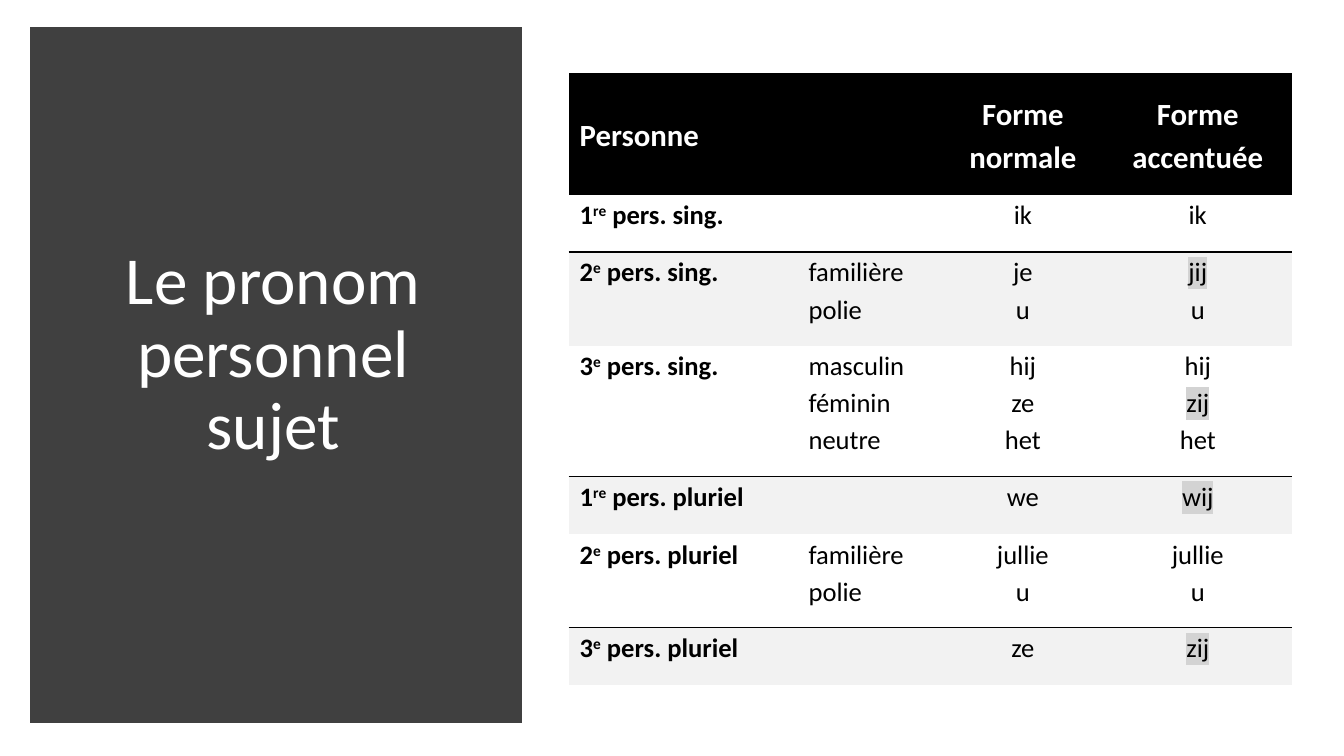
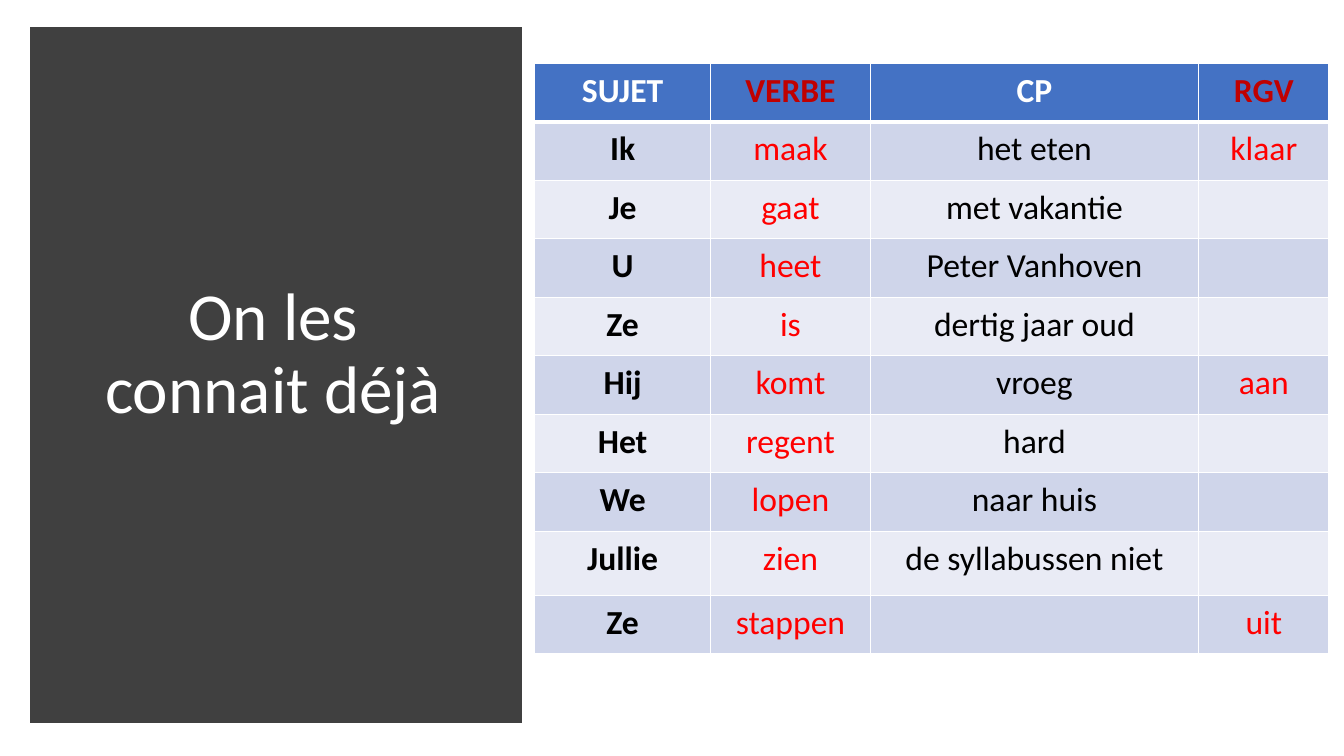
"""Builds two slides on Dutch subject pronouns, each with a title panel and a table."""
from lxml import etree
from pptx import Presentation
from pptx.dml.color import RGBColor
from pptx.enum.shapes import MSO_SHAPE
from pptx.enum.text import MSO_ANCHOR, MSO_AUTO_SIZE, PP_ALIGN
from pptx.oxml.ns import qn
from pptx.util import Inches, Pt

RECTANGLE = MSO_SHAPE.RECTANGLE
TOP, MIDDLE = MSO_ANCHOR.TOP, MSO_ANCHOR.MIDDLE
LEFT, CENTER = PP_ALIGN.LEFT, PP_ALIGN.CENTER
NO_AUTOFIT = MSO_AUTO_SIZE.NONE

FONT = "Calibri"
TITLE_ONLY = 5
BLACK = RGBColor(0x00, 0x00, 0x00)
WHITE = RGBColor(0xFF, 0xFF, 0xFF)
CHARCOAL = RGBColor(0x40, 0x40, 0x40)
PALE_GREY = RGBColor(0xF2, 0xF2, 0xF2)
MARKER_GREY = RGBColor(0xD3, 0xD3, 0xD3)
BLUE = RGBColor(0x44, 0x72, 0xC4)
BLUE_BAND = RGBColor(0xCF, 0xD5, 0xEA)
PALE_BAND = RGBColor(0xE9, 0xEB, 0xF5)
RED = RGBColor(0xFF, 0x00, 0x00)
DARK_RED = RGBColor(0xC0, 0x00, 0x00)

PANEL_BOX = (0.37, 0.34, 4.74, 6.76)
TITLE_BOX = (0.81, 0.81, 3.8, 5.43)

PRONOUN_TITLE = "Le pronom personnel sujet"
PRONOUN_HEADER = ("Personne", "", "Forme normale", "Forme accentuée")
PRONOUNS = [
    ("1^re^ pers. sing.", [("", "ik", "ik")]),
    ("2^e^ pers. sing.", [("familière", "je", "jij"), ("polie", "u", "u")]),
    ("3^e^ pers. sing.", [("masculin", "hij", "hij"), ("féminin", "ze", "zij"),
                          ("neutre", "het", "het")]),
    ("1^re^ pers. pluriel", [("", "we", "wij")]),
    ("2^e^ pers. pluriel", [("familière", "jullie", "jullie"), ("polie", "u", "u")]),
    ("3^e^ pers. pluriel", [("", "ze", "zij")]),
]
PRONOUN_COLUMNS = (2.27, 1.43, 1.58, 1.89)
PRONOUN_HEADER_HEIGHT = 1.21
PRONOUN_ROW_HEIGHTS = {1: 0.57, 2: 0.93, 3: 1.3}
PRONOUN_ALIGNMENTS = (LEFT, LEFT, CENTER, CENTER)

SENTENCE_TITLE = "On les connait déjà"
SENTENCES = [
    ("SUJET", "VERBE", "CP", "RGV"),
    ("Ik", "maak", "het eten", "klaar"),
    ("Je", "gaat", "met vakantie", ""),
    ("U", "heet", "Peter Vanhoven", ""),
    ("Ze", "is", "dertig jaar oud", ""),
    ("Hij", "komt", "vroeg", "aan"),
    ("Het", "regent", "hard", ""),
    ("We", "lopen", "naar huis", ""),
    ("Jullie", "zien", "de syllabussen niet", ""),
    ("Ze", "stappen", "", "uit"),
]
SENTENCE_COLUMNS = (1.75, 1.58, 3.26, 1.29)
SENTENCE_ROWS = [0.58] * 8 + [0.64, 0.58]


def add_panel_slide(presentation, title):
    """Add a slide with its title on the dark panel."""
    slide = presentation.slides.add_slide(presentation.slide_layouts[TITLE_ONLY])
    panel = slide.shapes.add_shape(RECTANGLE, *map(Inches, PANEL_BOX))
    panel.shadow.inherit = False
    panel.fill.solid()
    panel.fill.fore_color.rgb = CHARCOAL
    panel.line.color.rgb = CHARCOAL
    panel.line.width = Pt(10)
    outline = panel.element.spPr.find(qn("a:ln"))
    etree.SubElement(outline, qn("a:miter"), lim="800000")

    heading = slide.shapes.title
    panel.element.getparent().remove(panel.element)
    heading.element.addprevious(panel.element)
    heading.left, heading.top, heading.width, heading.height = map(Inches, TITLE_BOX)
    frame = heading.text_frame
    frame.text = title
    frame.word_wrap = True
    frame.auto_size = NO_AUTOFIT
    frame.vertical_anchor = MIDDLE
    paragraph = frame.paragraphs[0]
    paragraph.alignment = CENTER
    paragraph.line_spacing = 0.9
    style_font(paragraph.runs[0].font, 48, WHITE)
    return slide


def style_font(font, size, color, bold=False):
    """Apply the shared typeface with a size, colour and weight."""
    font.name = FONT
    font.size = Pt(size)
    font.bold = bold
    font.color.rgb = color


def add_grid(slide, left, top, columns, rows):
    """Add an unbanded table with the given column widths and row heights."""
    box = map(Inches, (left, top, sum(columns), sum(rows)))
    table = slide.shapes.add_table(len(rows), len(columns), *box).table
    table.first_row = table.horz_banding = False
    for column, width in zip(table.columns, columns):
        column.width = Inches(width)
    for row, height in zip(table.rows, rows):
        row.height = Inches(height)
    return table


def style_cell(cell, margins, fill, borders, anchor=TOP):
    """Set margins, fill and the four borders; borders maps side to colour and width."""
    margins = map(Inches, margins)
    cell.margin_left, cell.margin_top, cell.margin_right, cell.margin_bottom = margins
    cell.vertical_anchor = anchor
    properties = cell._tc.get_or_add_tcPr()
    for side in "LRTB":
        color, width = borders.get(side, (None, 0))
        line = etree.SubElement(properties, qn(f"a:ln{side}"), w=str(Pt(width)))
        if color is None:
            etree.SubElement(line, qn("a:noFill"))
        else:
            solid = etree.SubElement(line, qn("a:solidFill"))
            etree.SubElement(solid, qn("a:srgbClr"), val=str(color))
    if fill is None:
        cell.fill.background()
    else:
        cell.fill.solid()
        cell.fill.fore_color.rgb = fill


def write_cell(cell, lines, size, color, bold, alignment, spacing=1.0, marked=()):
    """Write one paragraph a line; text between carets is raised, marked lines shaded."""
    frame = cell.text_frame
    for index, text in enumerate(lines):
        paragraph = frame.add_paragraph() if index else frame.paragraphs[0]
        paragraph.alignment = alignment
        paragraph.line_spacing = spacing
        paragraph.font.size = Pt(size)
        for part_index, part in enumerate(text.split("^") if text else ()):
            run = paragraph.add_run()
            run.text = part
            style_font(run.font, size, color, bold)
            properties = run._r.get_or_add_rPr()
            if part_index % 2:
                properties.set("baseline", "30000")
            if index in marked:
                highlight = etree.Element(qn("a:highlight"))
                etree.SubElement(highlight, qn("a:srgbClr"), val=str(MARKER_GREY))
                properties.find(qn("a:solidFill")).addnext(highlight)


def build_pronoun_slide(presentation):
    """Build the pronoun table, shading stressed forms that differ from normal ones."""
    slide = add_panel_slide(presentation, PRONOUN_TITLE)
    heights = [PRONOUN_ROW_HEIGHTS[len(forms)] for person, forms in PRONOUNS]
    table = add_grid(slide, 5.64, 0.72, PRONOUN_COLUMNS,
                     [PRONOUN_HEADER_HEIGHT] + heights)
    for column, text in enumerate(PRONOUN_HEADER):
        cell = table.cell(0, column)
        style_cell(cell, (0.11, 0.16, 0.08, 0.16), BLACK, {}, MIDDLE)
        write_cell(cell, [text], 22, WHITE, True, PRONOUN_ALIGNMENTS[column], 1.15)
    for row, (person, forms) in enumerate(PRONOUNS, 1):
        shaded = row % 2 == 0
        fill = PALE_GREY if shaded else None
        borders = {"T" if shaded else "B": (BLACK, 1)}
        differing = [index for index, (kind, normal, stressed) in enumerate(forms)
                     if normal != stressed]
        for column, lines in enumerate([[person], *zip(*forms)]):
            cell = table.cell(row, column)
            style_cell(cell, (0.11, 0, 0.08, 0.16), fill, borders)
            write_cell(cell, lines, 19, BLACK, column == 0, PRONOUN_ALIGNMENTS[column],
                       1.15, differing if column == 3 else ())


def build_sentence_slide(presentation):
    """Build the sentence table with its verb parts in red."""
    slide = add_panel_slide(presentation, SENTENCE_TITLE)
    table = add_grid(slide, 5.3, 0.63, SENTENCE_COLUMNS, SENTENCE_ROWS)
    for row, words in enumerate(SENTENCES):
        header = row == 0
        fill = BLUE if header else (PALE_BAND, BLUE_BAND)[row % 2]
        plain, verbal = (WHITE, DARK_RED) if header else (BLACK, RED)
        borders = dict.fromkeys("LRTB", (WHITE, 1))
        if header:
            borders["B"] = (WHITE, 3)
        elif row == 1:
            borders["T"] = (WHITE, 3)
        for column, word in enumerate(words):
            cell = table.cell(row, column)
            style_cell(cell, (0.13, 0.07, 0.13, 0.07), fill, borders)
            write_cell(cell, [word], 24, verbal if column % 2 else plain,
                       header or column == 0, CENTER)


def main():
    """Create and save the presentation."""
    presentation = Presentation()
    presentation.slide_width = Inches(13.33)
    presentation.slide_height = Inches(7.5)
    build_pronoun_slide(presentation)
    build_sentence_slide(presentation)
    presentation.save("out.pptx")


if __name__ == "__main__":
    main()
